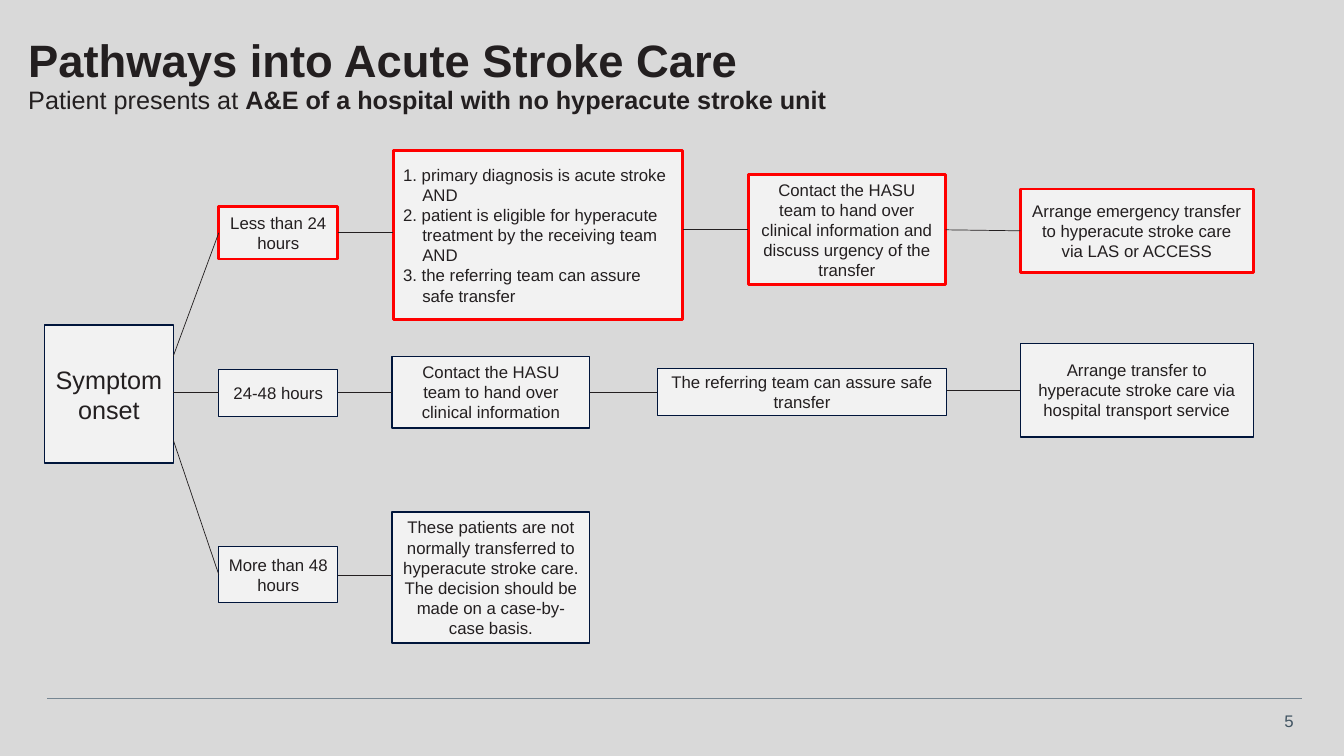
from lxml.etree import SubElement
from pptx import Presentation
from pptx.dml.color import RGBColor
from pptx.enum.shapes import MSO_CONNECTOR as Connector, MSO_SHAPE as Shape
from pptx.enum.text import MSO_ANCHOR as Anchor, MSO_AUTO_SIZE as AutoSize, PP_ALIGN as Align
from pptx.oxml.ns import qn
from pptx.util import Inches, Pt

INK, NAVY, RED, PALE = "231F20", "00153B", "FF0000", "F2F2F2"
COLUMNS = {
    "onset": (0.44, 1.28),
    "window": (2.17, 1.18),
    "first": (3.89, 1.96),
    "first wide": (3.9, 2.87),
    "second": (7.42, 1.96),
    "second wide": (6.52, 2.87),
    "last": (10.12, 2.31),
}
CRITERIA = (
    "1. primary diagnosis is acute stroke AND\n"
    "2. patient is eligible for hyperacute treatment by the receiving team AND\n"
    "3. the referring team can assure safe transfer"
)
PATHWAYS = [
    (2.28, RED, 2, [
        ("window", 0.52, 0.03, (1.25, 0.03), "Less than 24 hours"),
        ("first wide", 1.68, 0.05, (0.03, 0.03), CRITERIA),
        ("second", 1.09, 0, (0, 0),
         "Contact the HASU team to hand over clinical information and discuss urgency of the transfer"),
        ("last", 0.83, 0.01, (0, 0.01),
         "Arrange emergency transfer to hyperacute stroke care via LAS or ACCESS"),
    ]),
    (3.89, NAVY, 1, [
        ("window", 0.47, 0.01, (0, 0), "24-48 hours"),
        ("first", 0.71, 0, (0, 0), "Contact the HASU team to hand over clinical information"),
        ("second wide", 0.47, 0, (0, 0), "The referring team can assure safe transfer"),
        ("last", 0.93, -0.02, (-0.02, -0.02),
         "Arrange transfer to hyperacute stroke care via hospital transport service"),
    ]),
    (5.71, NAVY, 1, [
        ("window", 0.56, -0.01, (-1.34, -0.01), "More than 48 hours"),
        ("first", 1.3, 0.02, (0, 0),
         "These patients are not normally transferred to hyperacute stroke care. "
         "The decision should be made on a case-by-case basis."),
    ]),
]


def colour(value):
    """Turn a hex string into a colour."""
    return RGBColor.from_string(value)


def apply(target, formats):
    """Set every attribute named in a dict of format values."""
    for name, value in formats.items():
        setattr(target, name, value)


def style_font(font, size, tint=INK, bold=False):
    """Give a font its face, size, weight and colour."""
    apply(font, {"name": "Arial", "size": Pt(size), "bold": bold})
    font.color.rgb = colour(tint)


def add_line(page, start, end, tint=INK):
    """Draw a thin line between two points."""
    line = page.shapes.add_connector(Connector.STRAIGHT, *map(Inches, start + end))
    line.line.color.rgb = colour(tint)
    line.line.width = Pt(0.5)
    SubElement(line._element.spPr, qn("a:effectLst"))


def add_step(page, column, centre, height, text, border, weight, size=12):
    """Place a bordered box in a column around a centre height."""
    left, width = COLUMNS[column]
    box = page.shapes.add_shape(Shape.RECTANGLE, *map(Inches, (left, centre - height / 2, width, height)))
    box.shadow.inherit = False
    box.fill.solid()
    box.fill.fore_color.rgb = colour(PALE)
    box.line.color.rgb = colour(border)
    box.line.width = Pt(weight)
    apply(box.text_frame, {"word_wrap": True, "vertical_anchor": Anchor.MIDDLE, "text": text})
    numbered = "\n" in text
    for para in box.text_frame.paragraphs:
        para.alignment = Align.LEFT if numbered else Align.CENTER
        if numbered:
            indent = Inches(0.19)
            para._p.get_or_add_pPr().set("marL", str(indent))
            para._p.get_or_add_pPr().set("indent", str(-indent))
        for span in para.runs:
            style_font(span.font, size)


def add_pathway(page, centre, border, weight, steps):
    """Place one row of steps, each linked to the one before it."""
    before = "onset"
    for column, height, drop, (start, end), text in steps:
        add_step(page, column, centre + drop, height, text, border, weight)
        add_line(page, (sum(COLUMNS[before]), centre + start), (COLUMNS[column][0], centre + end))
        before = column


def add_title(page, left, top, width, height):
    """Fill the title placeholder with a heading and a subheading."""
    title = page.shapes.title
    apply(title, {"left": Inches(left), "top": Inches(top),
                  "width": Inches(width), "height": Inches(height)})
    frame = title.text_frame
    apply(frame, {"margin_left": 0, "margin_right": 0, "margin_top": 0, "margin_bottom": 0,
                  "word_wrap": True, "auto_size": AutoSize.NONE, "vertical_anchor": Anchor.TOP})
    para = frame.paragraphs[0]
    apply(para, {"alignment": Align.LEFT, "line_spacing": 0.9})
    spans = [
        ("Pathways into Acute Stroke Care", 32.4, True),
        ("Patient presents at ", 18, False),
        ("A&E of a hospital with no hyperacute stroke unit", 18, True),
    ]
    for index, (text, size, bold) in enumerate(spans):
        if index == 1:
            para.add_line_break()
            SubElement(para._p[-1], qn("a:rPr"), sz="3240")
        span = para.add_run()
        span.text = text
        style_font(span.font, size, bold=bold)


def add_footer(page, left, top, right):
    """Draw the footer rule with the page number below its right end."""
    add_line(page, (left, top), (right, top), "768692")
    box = page.shapes.add_textbox(*map(Inches, (right - 0.39, top + 0.07, 0.41, 0.3)))
    apply(box.text_frame, {"word_wrap": False, "text": "5"})
    para = box.text_frame.paragraphs[0]
    para.alignment = Align.RIGHT
    style_font(para.runs[0].font, 12, "425563")


def main():
    """Build the slide and save it."""
    deck = Presentation()
    apply(deck, {"slide_width": Inches(13.33), "slide_height": Inches(7.5)})
    page = deck.slides.add_slide(deck.slide_layouts[5])
    page.background.fill.solid()
    page.background.fill.fore_color.rgb = colour("D9D9D9")
    add_title(page, 0.28, 0.38, 12.47, 0.71)
    add_step(page, "onset", 3.91, 1.37, "Symptom onset", NAVY, 1, 18)
    for pathway in PATHWAYS:
        add_pathway(page, *pathway)
    add_footer(page, 0.47, 6.93, 12.91)
    deck.save("out.pptx")


if __name__ == "__main__":
    main()
